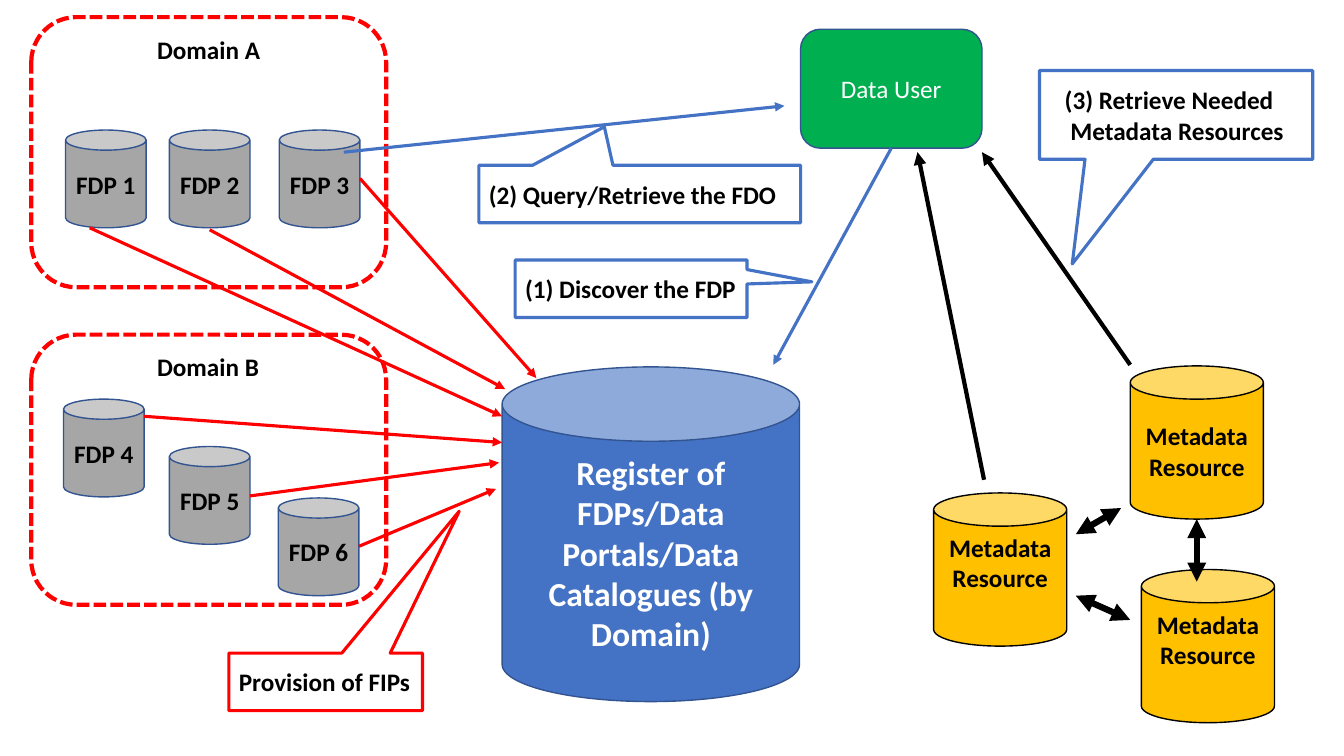
import dataclasses
import typing

import pptx
import pptx.dml.color
import pptx.enum.dml
import pptx.enum.shapes
import pptx.enum.text
import pptx.oxml
import pptx.oxml.ns
import pptx.util

KIND = pptx.enum.shapes.MSO_SHAPE
LINK = pptx.enum.shapes.MSO_CONNECTOR
ALIGN = pptx.enum.text.PP_ALIGN
ANCHOR = pptx.enum.text.MSO_ANCHOR

# The slide is a grid of square cells; every place and length counts cells.
WIDTH, HEIGHT = pptx.util.Inches(13.33), pptx.util.Inches(7.5)
ROWS = 75
CELL = HEIGHT / ROWS


@dataclasses.dataclass(frozen=True)
class Theme:
    font: str = "Calibri"
    body: float = 18
    large: float = 24
    thin: float = 1
    mid: float = 2.25
    thick: float = 3
    heavy: float = 4.5
    black: str = "000000"
    white: str = "FFFFFF"
    red: str = "FF0000"
    blue: str = "4472C4"
    navy: str = "325491"
    grey: str = "A6A6A6"
    green: str = "00B050"
    gold: str = "FFC000"


THEME = Theme()


@dataclasses.dataclass(frozen=True)
class Look:
    kind: typing.Any
    fill: str | None = None
    line: str = THEME.navy
    weight: float = THEME.thin
    dashed: bool = False
    ink: str = THEME.black
    size: float = THEME.body
    bold: bool = True
    align: typing.Any = ALIGN.CENTER


STORE = Look(KIND.CAN, THEME.blue, ink=THEME.white, size=THEME.large)
POINT = Look(KIND.CAN, THEME.grey)
META = Look(KIND.CAN, THEME.gold, THEME.black)
USER = Look(KIND.ROUNDED_RECTANGLE, THEME.green, ink=THEME.white, bold=False)
FRAME = Look(KIND.ROUNDED_RECTANGLE, None, THEME.red, THEME.thick, True)
NOTE = Look(KIND.RECTANGULAR_CALLOUT, None, THEME.blue, THEME.mid, align=ALIGN.LEFT)
ALERT = dataclasses.replace(NOTE, line=THEME.red)


@dataclasses.dataclass(frozen=True)
class Box:
    look: Look
    col: float
    row: float
    wide: float
    high: float
    text: str = ""
    tip: tuple[float, ...] = ()
    left: float = 0.5
    base: float = 0.5
    dent: float = 0


@dataclasses.dataclass(frozen=True)
class Arrow:
    start: tuple[float, float]
    end: tuple[float, float]
    tint: str = THEME.red
    weight: float = THEME.mid
    double: bool = False


REGISTER = Box(STORE, 49.8, 36.4, 29.5, 33.2,
               "Register of FDPs/Data Portals/Data Catalogues (by Domain)")
PERSON = Box(USER, 79.4, 2.9, 18, 11.8, "Data User")
DOMAINS = [("Domain A", 1.7), ("Domain B", 33.2)]
SPOTS = [(6.5, 12.9), (16.8, 12.9), (27.7, 12.9), (6.3, 39.6), (16.8, 44.3), (27.6, 49.4)]
POINTS = [Box(POINT, col, row, 8, 9.7, f"FDP {index}")
          for index, (col, row) in enumerate(SPOTS, 1)]
METAS = [Box(META, col, row, 13.2, 15.2, "Metadata\nResource", base=base)
         for col, row, base in [(92.6, 48.9, 3.5), (112.1, 36.3, 0.5), (113.2, 56.5, 3.5)]]
NOTES = [
    Box(ALERT, 22.7, 64.8, 19.2, 5.7, "Provision of FIPs", (0.69, -2.97), 1),
    Box(NOTE, 51.1, 25.8, 23, 5.7, "(1) Discover the FDP", (0.78, -0.12), 1),
    Box(NOTE, 47.5, 16.4, 31.9, 5.7, "(2) Query/Retrieve the FDO", (-0.11, -1.17), 1),
    Box(NOTE, 103.1, 7, 27.1, 8.8, "(3) Retrieve Needed\nMetadata Resources",
        (-0.38, 1.68), 2.5, dent=0.55),
]
FEEDS = [
    Arrow((35.7, 17.7), (53.2, 37.5)),
    Arrow((20.8, 22.8), (50.1, 38.6)),
    Arrow((8.9, 22.6), (49.8, 41.3)),
    Arrow((14.3, 41.3), (49.8, 43.9)),
    Arrow((24.8, 49.2), (49.5, 45.9)),
    Arrow((35.6, 54.2), (49.2, 48.5)),
]
SEARCH = Arrow((88.4, 14.7), (76.7, 36.2), THEME.blue)
QUERY = Arrow((34.1, 15.1), (77.8, 10.5), THEME.blue)
SWAPS = [Arrow(start, end, THEME.black, THEME.heavy, True) for start, end in [
    ((106.7, 53), (111.2, 50.4)),
    ((106.7, 59.1), (112.1, 61.5)),
    ((118.7, 57.7), (118.7, 51.5)),
]]
FETCHES = [Arrow(start, end, THEME.black, THEME.thick) for start, end in [
    ((112.1, 36.2), (97.4, 15.1)),
    ((97.6, 47.6), (91, 15.1)),
]]


def cells(*counts: float) -> list[int]:
    return [round(count * CELL) for count in counts]


def tint(code: str) -> pptx.dml.color.RGBColor:
    return pptx.dml.color.RGBColor.from_string(code)


def assign(target: typing.Any, values: dict[str, typing.Any]) -> None:
    for name, value in values.items():
        setattr(target, name, value)


def write(shape: typing.Any, box: Box, anchor: typing.Any = ANCHOR.MIDDLE) -> None:
    left, right, base = cells(box.left, 0.5, box.base)
    frame = shape.text_frame
    assign(frame, {"word_wrap": True, "vertical_anchor": anchor, "margin_left": left,
                   "margin_right": right, "margin_bottom": base})
    frame.text = box.text
    look = box.look
    for index, para in enumerate(frame.paragraphs):
        para.alignment = look.align
        if index and box.dent:
            para._p.get_or_add_pPr().set("marL", str(cells(box.dent)[0]))
        for run in para.runs:
            assign(run.font, {"name": THEME.font, "size": pptx.util.Pt(look.size),
                              "bold": look.bold})
            run.font.color.rgb = tint(look.ink)


def draw(shapes: typing.Any, box: Box) -> typing.Any:
    look = box.look
    shape = shapes.add_shape(look.kind, *cells(box.col, box.row, box.wide, box.high))
    shape.shadow.inherit = False
    if look.fill:
        shape.fill.solid()
        shape.fill.fore_color.rgb = tint(look.fill)
    else:
        shape.fill.background()
    shape.line.color.rgb = tint(look.line)
    shape.line.width = pptx.util.Pt(look.weight)
    if look.dashed:
        shape.line.dash_style = pptx.enum.dml.MSO_LINE.SQUARE_DOT
    for index, value in enumerate(box.tip):
        shape.adjustments[index] = value
    if box.text:
        write(shape, box)
    return shape


def label(shapes: typing.Any, name: str, row: float) -> None:
    box = Box(NOTE, 14.6, row, 12.3, 4, name, left=1)
    shape = shapes.add_textbox(*cells(box.col, box.row, box.wide, box.high))
    write(shape, box, ANCHOR.TOP)


def link(shapes: typing.Any, arrow: Arrow) -> typing.Any:
    line = shapes.add_connector(LINK.STRAIGHT, *cells(*arrow.start, *arrow.end))
    line.line.color.rgb = tint(arrow.tint)
    line.line.width = pptx.util.Pt(arrow.weight)
    stroke = line.line._get_or_add_ln()
    for end in ("a:headEnd", "a:tailEnd") if arrow.double else ("a:tailEnd",):
        head = pptx.oxml.parse_xml(f"<{end} {pptx.oxml.ns.nsdecls('a')} type='triangle'/>")
        stroke.append(head)
    blank = pptx.oxml.parse_xml(f"<a:effectLst {pptx.oxml.ns.nsdecls('a')}/>")
    line._element.spPr.append(blank)
    return line


def main() -> None:
    deck = pptx.Presentation()
    deck.slide_width, deck.slide_height = WIDTH, HEIGHT
    shapes = deck.slides.add_slide(deck.slide_layouts[6]).shapes
    draw(shapes, REGISTER)
    for name, row in DOMAINS:
        draw(shapes, Box(FRAME, 3.1, row, 35.2, 26.8))
        label(shapes, name, row + 1.2)
    for box in POINTS + METAS:
        draw(shapes, box)
    user = draw(shapes, PERSON)
    for arrow in [*FEEDS, QUERY, *SWAPS, *FETCHES]:
        link(shapes, arrow)
    link(shapes, SEARCH).begin_connect(user, 2)
    for box in NOTES:
        draw(shapes, box)
    deck.save("out.pptx")


if __name__ == "__main__":
    main()
